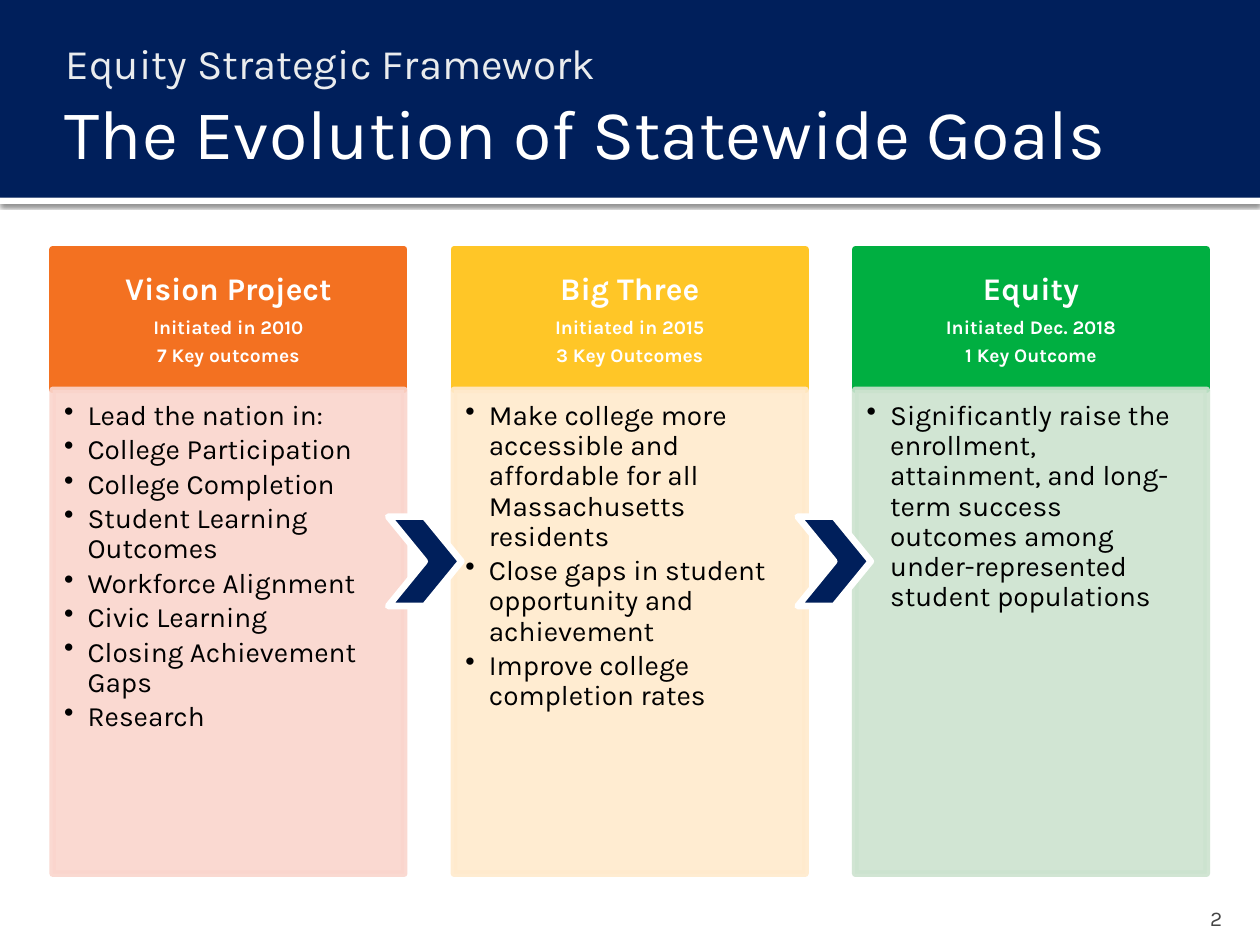
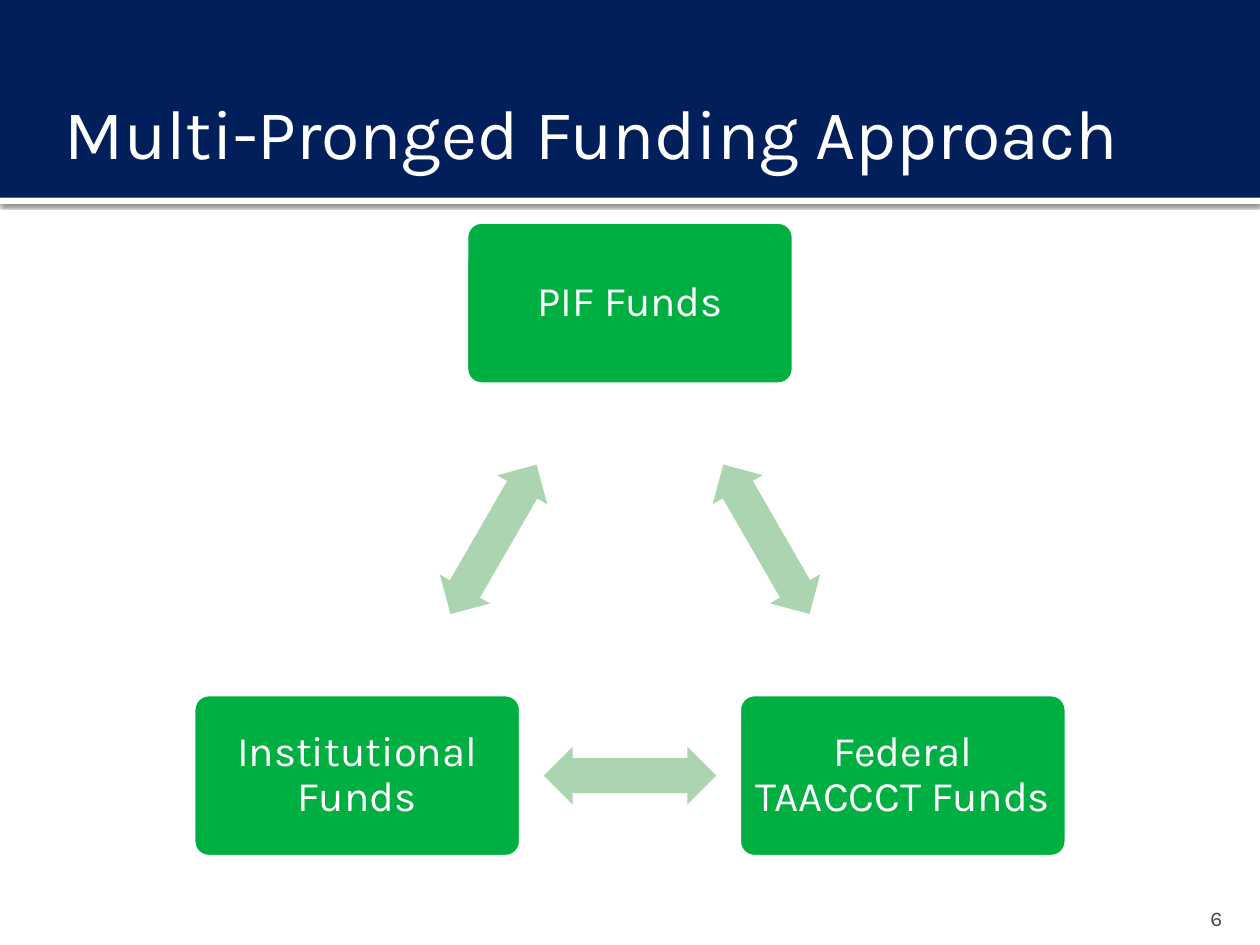
import math

from lxml import etree
from pptx import Presentation
from pptx import util as u
from pptx.dml.color import RGBColor
from pptx.enum import shapes, text
from pptx.oxml import ns

Pt = u.Pt
FONT = "Karla"
NAVY = RGBColor(0x00, 0x1F, 0x5B)
WHITE = RGBColor(0xFF, 0xFF, 0xFF)
BLACK = RGBColor(0x00, 0x00, 0x00)
PALE = RGBColor(0xEA, 0xEC, 0xEE)
GREY = RGBColor(0x45, 0x45, 0x45)
ORANGE = RGBColor(0xF3, 0x71, 0x21)
PEACH = RGBColor(0xFA, 0xD5, 0xCD)
YELLOW = RGBColor(0xFF, 0xC6, 0x27)
CREAM = RGBColor(0xFF, 0xEA, 0xCD)
GREEN = RGBColor(0x00, 0xAF, 0x41)
MINT = RGBColor(0xCC, 0xE3, 0xCF)
SAGE = RGBColor(0xAB, 0xD4, 0xB0)

SLIDE_W, SLIDE_H = 720, 540
BAND_H, RULE_H = 113, 3.6
OUTLINE = 3.78
SHAPE = shapes.MSO_SHAPE
ANCHOR = text.MSO_ANCHOR
ALIGN = text.PP_ALIGN

TITLE = {"size": Pt(40), "color": WHITE}
SUBTITLE = {"size": Pt(24), "color": PALE}
NUMBER = {"size": Pt(12), "color": GREY}
CARD_NAME = {"size": Pt(18), "color": WHITE, "bold": True}
CARD_FACT = {"size": Pt(11), "color": WHITE, "bold": True}
BULLET = {"size": Pt(16), "color": BLACK}
NODE = {"size": Pt(24), "color": WHITE}

GOALS = [
    (ORANGE, PEACH, ["Vision Project", "Initiated in 2010", "7 Key outcomes"],
     ["Lead the nation in:", "College Participation", "College Completion",
      "Student Learning Outcomes", "Workforce Alignment", "Civic Learning",
      "Closing Achievement Gaps", "Research"]),
    (YELLOW, CREAM, ["Big Three", "Initiated in 2015", "3 Key Outcomes"],
     ["Make college more accessible and affordable for all Massachusetts residents",
      "Close gaps in student opportunity and achievement",
      "Improve college completion rates"]),
    (GREEN, MINT, ["Equity", "Initiated Dec. 2018", "1 Key Outcome"],
     ["Significantly raise the enrollment, attainment, and long-term success "
      "outcomes among under-represented student populations"]),
]
FUNDS = ["PIF Funds", "Federal TAACCCT Funds", "Institutional Funds"]


def set_all(obj, values):
    """Set each named attribute of an object."""
    for name, value in values.items():
        setattr(obj, name, value)


def sub(parent, tag, **attrs):
    """Append a DrawingML child element with attributes."""
    el = etree.SubElement(parent, ns.qn(tag))
    for name, value in attrs.items():
        el.set(name, str(value))
    return el


def add_shape(s, kind, box, fill, line=None, adj=(), alpha=None):
    """Add a flat preset shape, optionally outlined and translucent."""
    sp = s.shapes.add_shape(kind, *map(Pt, box))
    sp.shadow.inherit = False
    sp.fill.solid()
    sp.fill.fore_color.rgb = fill
    if line is None:
        sp.line.fill.background()
    else:
        sp.line.color.rgb = line
        sp.line.width = Pt(OUTLINE)
    for i, value in enumerate(adj):
        sp.adjustments[i] = value
    if alpha:
        for clr in sp._element.spPr.iter(ns.qn("a:srgbClr")):
            sub(clr, "a:alpha", val=alpha * 1000)
    return sp


def set_frame(sp, insets, anchor=ANCHOR.TOP):
    """Set wrapping, anchor and insets (left, top, right, bottom)."""
    tf = sp.text_frame
    sides = ("margin_left", "margin_top", "margin_right", "margin_bottom")
    set_all(tf, {"word_wrap": True, "vertical_anchor": anchor,
                 **dict(zip(sides, map(Pt, insets)))})
    return tf


def add_lines(tf, lines, para):
    """Write (wording, font values) pairs as paragraphs and return them."""
    for i, (words, font) in enumerate(lines):
        p = tf.add_paragraph() if i else tf.paragraphs[0]
        set_all(p, para)
        r = p.add_run()
        r.text = words
        values = dict(font)
        r.font.color.rgb = values.pop("color")
        set_all(r.font, {"name": FONT, **values})
    return tf.paragraphs


def add_label(s, box, words, font, insets, anchor=ANCHOR.TOP, align=ALIGN.LEFT):
    """Add a one-paragraph text box."""
    tf = set_frame(s.shapes.add_textbox(*map(Pt, box)), insets, anchor)
    return add_lines(tf, [(words, font)], {"alignment": align})[0]


def add_base(prs, title, number):
    """Add a slide with the shared band, rule, title and number."""
    s = prs.slides.add_slide(prs.slide_layouts[6])
    rule = add_shape(s, SHAPE.RECTANGLE, (0, BAND_H, SLIDE_W, RULE_H), WHITE)
    effects = rule._element.spPr.find(ns.qn("a:effectLst"))
    shadow = sub(effects, "a:outerShdw", blurRad=Pt(2.5), dist=Pt(0.8),
                 dir=5400000, algn="t", rotWithShape=0)
    sub(sub(shadow, "a:srgbClr", val="000000"), "a:alpha", val=60000)
    add_shape(s, SHAPE.RECTANGLE, (0, 0, SLIDE_W, BAND_H), NAVY)
    add_label(s, (648, 510, 57.6, 21.6), str(number), NUMBER,
              (7.2, 3.6, 7.2, 0), ANCHOR.BOTTOM, ALIGN.RIGHT)
    add_label(s, (30, 42, 660, 66), title, TITLE,
              (7.2, 3.6, 3.6, 3.6), ANCHOR.MIDDLE)
    return s


def add_card(s, left, color, tint, heading, bullets):
    """Add a goal card: coloured heading over a tinted bullet list."""
    width, top, head_h, body_h = 200.9, 142.5, 80.3, 276.5
    head = add_shape(s, SHAPE.RECTANGLE, (left, top, width, head_h), color, color)
    tf = set_frame(head, (10, 5.7, 10, 5.7), ANCHOR.MIDDLE)
    fonts = [CARD_NAME] + [CARD_FACT] * (len(heading) - 1)
    para = {"alignment": ALIGN.CENTER, "line_spacing": 0.9}
    for p, font in zip(add_lines(tf, zip(heading, fonts), para), fonts):
        p.space_after = Pt(round(font["size"].pt * 0.35, 1))

    body = add_shape(s, SHAPE.RECTANGLE, (left, top + head_h, width, body_h),
                     tint, tint, alpha=90)
    tf = set_frame(body, (6.5, 6.5, 8.6, 10))
    para = {"alignment": ALIGN.LEFT, "line_spacing": 0.9, "space_after": Pt(2.4)}
    for p in add_lines(tf, [(words, BULLET) for words in bullets], para):
        pPr = p._p.get_or_add_pPr()
        pPr.set("marL", str(Pt(13.5)))
        pPr.set("indent", str(Pt(-13.5)))
        sub(pPr, "a:buChar", char="•")


def add_node(s, cx, cy, words):
    """Add a rounded funding box centred on a point."""
    w, h = 188.6, 94.3
    sp = add_shape(s, SHAPE.ROUNDED_RECTANGLE, (cx - w / 2, cy - h / 2, w, h),
                   GREEN, WHITE, [0.1])
    tf = set_frame(sp, (7.2,) * 4, ANCHOR.MIDDLE)
    add_lines(tf, [(words, NODE)], {"alignment": ALIGN.CENTER,
                                    "line_spacing": 0.9, "space_after": Pt(8.4)})


def add_double_arrow(s, cx, cy, angle):
    """Add a rotated two-headed arrow centred on a point."""
    w, h = 98.6, 33.1
    sp = add_shape(s, SHAPE.LEFT_RIGHT_ARROW, (cx - w / 2, cy - h / 2, w, h),
                   SAGE, adj=[0.6, 0.5])
    sp.rotation = angle


def add_goals_slide(prs):
    """Build the slide of three goal cards linked by chevrons."""
    s = add_base(prs, "The Evolution of Statewide Goals", 2)
    p = add_label(s, (24, 14.4, 672, 36), "Equity Strategic Framework", SUBTITLE,
                  (4.3, 7.2, 7.2, 3.6))
    pPr = p._p.get_or_add_pPr()
    pPr.set("marL", str(Pt(34.5)))
    pPr.set("indent", str(Pt(-25.2)))
    for i, goal in enumerate(GOALS):
        add_card(s, 30.1 + 229.3 * i, *goal)
    for i in range(len(GOALS) - 1):
        add_shape(s, SHAPE.CHEVRON, (221.8 + 234 * i, 295.2, 41.8, 51.1), NAVY, WHITE)


def add_funding_slide(prs):
    """Build the slide of funding sources set in a triangle."""
    s = add_base(prs, "Multi-Pronged Funding Approach", 6)
    cx, cy, radius, step = SLIDE_W / 2, 353.2, 180, 360 / len(FUNDS)
    for i, words in enumerate(FUNDS):
        turn = math.radians(step * i - 90)
        add_node(s, cx + radius * math.cos(turn), cy + radius * math.sin(turn), words)
        mid = turn + math.radians(step / 2)
        reach = radius * math.cos(math.radians(step / 2))
        add_double_arrow(s, cx + reach * math.cos(mid), cy + reach * math.sin(mid),
                         step / 2 + step * i)


def main():
    """Build both slides and save the file."""
    prs = Presentation()
    set_all(prs, {"slide_width": Pt(SLIDE_W), "slide_height": Pt(SLIDE_H)})
    add_goals_slide(prs)
    add_funding_slide(prs)
    prs.save("out.pptx")


if __name__ == "__main__":
    main()
